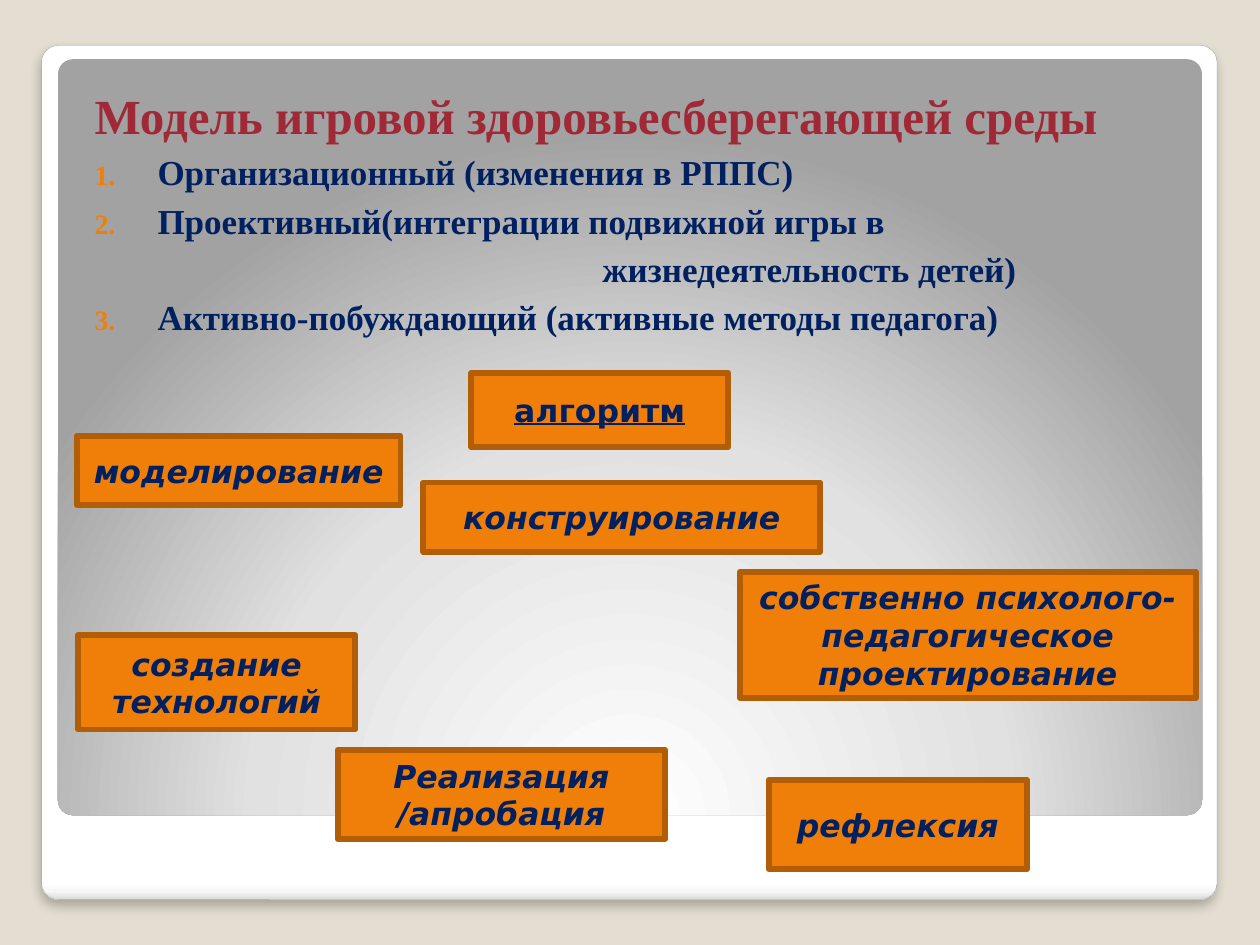
import pptx
import pptx.dml.color
import pptx.enum.shapes
import pptx.enum.text
import pptx.oxml
import pptx.oxml.ns
import pptx.util
from pptx.util import Inches

COLORS = {
    "background": "E3DED1",
    "frame_line": "A4A4A4",
    "title": "9F2936",
    "text": "002060",
    "accent": "F07F09",
    "box_line": "B25E07",
}
FRAME_STOPS = [(0, "FFFFFF"), (98, "FFFFFF"), (99, "F7F7F7"), (100, "DADADA")]
PANEL_STOPS = [(0, "FFFFFF"), (55, "E1E1E1"), (100, "A2A2A2")]
DOWNWARD = '<a:lin ang="5400000" scaled="0"/>'
FROM_BELOW = ('<a:path path="circle"><a:fillToRect l="50000" t="175000" '
              'r="50000" b="-75000"/></a:path>')
TITLE = "Модель игровой здоровьесберегающей среды"
COMPONENTS = [
    (1, "Организационный (изменения в РППС)"),
    (2, "Проективный(интеграции подвижной игры в"),
    (None, "жизнедеятельность детей)"),
    (3, "Активно-побуждающий (активные методы педагога)"),
]
STAGES = [
    (3.74, 2.96, 2.04, 0.59, ["алгоритм"]),
    (0.61, 3.46, 2.57, 0.55, ["моделирование"]),
    (3.36, 3.83, 3.15, 0.55, ["конструирование"]),
    (5.87, 4.54, 3.62, 1, ["собственно психолого-педагогическое проектирование"]),
    (0.62, 5.04, 2.2, 0.75, ["создание технологий"]),
    (2.68, 5.95, 2.6, 0.71, ["Реализация", "/апробация"]),
    (6.1, 6.19, 2.05, 0.71, ["рефлексия"]),
]


def rgb(name):
    return pptx.dml.color.RGBColor.from_string(COLORS[name])


def parse_drawing(xml):
    return pptx.oxml.parse_xml(xml.replace(">", f" {pptx.oxml.ns.nsdecls('a')}>", 1))


def add_run(p, text, font, size, color, italic=False, underline=False):
    r = p.add_run()
    r.text = text
    r.font.name = font
    r.font.size = pptx.util.Pt(size)
    r.font.color.rgb = rgb(color)
    r.font.bold = True
    r.font.italic = italic
    r.font.underline = underline


def add_panel(s, left, top, width, height, stops, direction):
    sp = s.shapes.add_shape(
        pptx.enum.shapes.MSO_SHAPE.ROUNDED_RECTANGLE,
        Inches(left), Inches(top), Inches(width), Inches(height))
    sp.adjustments[0] = 0.02
    sp.shadow.inherit = False
    sp.line.fill.background()
    sp.fill.background()
    gradient = "".join(
        f'<a:gs pos="{pos * 1000}"><a:srgbClr val="{color}"/></a:gs>' for pos, color in stops)
    spPr = sp._element.spPr
    spPr.replace(
        spPr.find(pptx.oxml.ns.qn("a:noFill")),
        parse_drawing(f"<a:gradFill><a:gsLst>{gradient}</a:gsLst>{direction}</a:gradFill>"))
    return sp


def add_frame(s):
    sp = add_panel(s, 0.33, 0.36, 9.33, 6.78, FRAME_STOPS, DOWNWARD)
    sp.line.color.rgb = rgb("frame_line")
    sp.line.width = pptx.util.Pt(0.16)
    sp._element.spPr.find(pptx.oxml.ns.qn("a:effectLst")).append(parse_drawing(
        '<a:outerShdw blurRad="76200" dist="50800" dir="5400000" algn="tl" rotWithShape="0">'
        '<a:srgbClr val="000000"><a:alpha val="25000"/></a:srgbClr></a:outerShdw>'))


def number_paragraph(p, number):
    pPr = p._p.get_or_add_pPr()
    pPr.set("marL", str(Inches(0.5)))
    pPr.set("indent", str(Inches(-0.5)))
    start = ' startAt="3"' if number == 3 else ""
    for xml in (f'<a:buClr><a:srgbClr val="{COLORS["accent"]}"/></a:buClr>',
                '<a:buSzPct val="80000"/>',
                f'<a:buAutoNum type="arabicPeriod"{start}/>'):
        pPr.append(parse_drawing(xml.replace("/>", "></a:buSzPct>") if "buSzPct" in xml
                                 else xml.replace("/>", "></a:buAutoNum>") if "buAutoNum" in xml
                                 else xml))


def add_components(s):
    tf = s.shapes.add_textbox(Inches(0.55), Inches(0.58), Inches(8.95), Inches(6.16)).text_frame
    tf.word_wrap = True
    tf.margin_left, tf.margin_top = Inches(0.2), Inches(0.1)
    tf.margin_right, tf.margin_bottom = Inches(0.1), Inches(0.05)
    p = tf.paragraphs[0]
    p.space_before = pptx.util.Pt(2.5)
    add_run(p, TITLE, "Times New Roman", 28, "title")
    for number, text in COMPONENTS:
        p = tf.add_paragraph()
        p.space_before = pptx.util.Pt(3.6)
        if number:
            number_paragraph(p, number)
        else:
            p._p.get_or_add_pPr().set("marL", str(Inches(4.03)))
        add_run(p, text, "Times New Roman", 20, "text")


def add_stage(s, left, top, width, height, lines, heading):
    sp = s.shapes.add_shape(
        pptx.enum.shapes.MSO_SHAPE.RECTANGLE,
        Inches(left), Inches(top), Inches(width), Inches(height))
    sp.shadow.inherit = False
    sp.fill.solid()
    sp.fill.fore_color.rgb = rgb("accent")
    sp.line.color.rgb = rgb("box_line")
    sp.line.width = pptx.util.Pt(3.35)
    tf = sp.text_frame
    tf.word_wrap = True
    tf.vertical_anchor = pptx.enum.text.MSO_ANCHOR.MIDDLE
    for i, line in enumerate(lines):
        p = tf.add_paragraph() if i else tf.paragraphs[0]
        p.alignment = pptx.enum.text.PP_ALIGN.CENTER
        add_run(p, line, "DejaVu Sans", 18, "text", italic=not heading, underline=heading)


def main():
    """Build the slide on the model of a health-saving play environment."""
    prs = pptx.Presentation()
    prs.slide_width, prs.slide_height = Inches(10), Inches(7.5)
    s = prs.slides.add_slide(prs.slide_layouts[6])
    s.background.fill.solid()
    s.background.fill.fore_color.rgb = rgb("background")
    add_frame(s)
    add_panel(s, 0.46, 0.47, 9.08, 6, PANEL_STOPS, FROM_BELOW)
    add_components(s)
    for i, stage in enumerate(STAGES):
        add_stage(s, *stage, heading=i == 0)
    prs.save("out.pptx")


if __name__ == "__main__":
    main()
